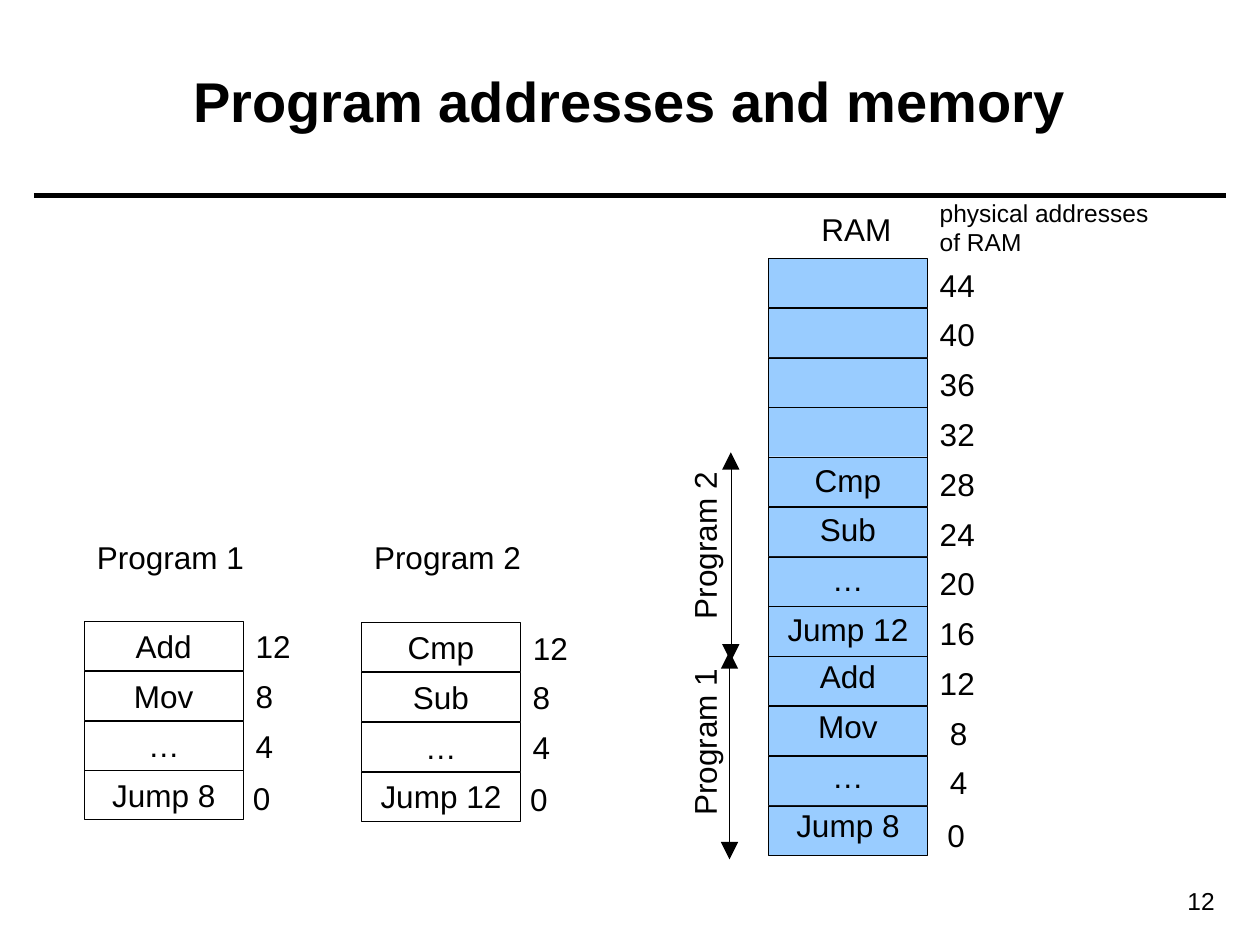
from dataclasses import dataclass

from lxml import etree
from pptx import Presentation
from pptx import util as u
from pptx.dml.color import RGBColor
from pptx.enum import shapes, text
from pptx.oxml import ns


@dataclass(frozen=True)
class Theme:
    font: str = "Arial"
    ink: RGBColor = RGBColor(0x00, 0x00, 0x00)
    memory: RGBColor = RGBColor(0x99, 0xCC, 0xFF)
    title: int = 32
    body: int = 18
    small: int = 14
    thin: float = 0.25
    rule: float = 3


THEME = Theme()
LEFT, CENTER, RIGHT = (text.PP_ALIGN.LEFT, text.PP_ALIGN.CENTER, text.PP_ALIGN.RIGHT)
MIDDLE, TOP = text.MSO_ANCHOR.MIDDLE, text.MSO_ANCHOR.TOP
FIT, FIXED = text.MSO_AUTO_SIZE.SHAPE_TO_FIT_TEXT, text.MSO_AUTO_SIZE.NONE

CELL_WIDTH, CELL_HEIGHT = 1.26, 0.39
PITCH = 0.395
LABEL_HEIGHT = 0.4
NAME_WIDTH = 1.42


def place(left, top, width, height):
    return [u.Inches(value) for value in (left, top, width, height)]


def write(shape, lines, size=THEME.body, align=LEFT, anchor=TOP,
          fit=FIXED, wrap=False, bold=False):
    """Fill a shape with one paragraph per line."""
    frame = shape.text_frame
    frame.text = "\n".join(lines)
    frame_format = {"word_wrap": wrap, "auto_size": fit, "vertical_anchor": anchor}
    for name, value in frame_format.items():
        setattr(frame, name, value)
    font_format = {"name": THEME.font, "size": u.Pt(size), "bold": bold}
    for para in frame.paragraphs:
        para.alignment = align
        for span in para.runs:
            for name, value in font_format.items():
                setattr(span.font, name, value)
            span.font.color.rgb = THEME.ink


def add_label(page, box, *lines, **format_values):
    label = page.shapes.add_textbox(*place(*box))
    write(label, lines, **{"fit": FIT, **format_values})
    return label


def add_cell(page, left, top, fill=None):
    cell = page.shapes.add_shape(
        shapes.MSO_SHAPE.RECTANGLE, *place(left, top, CELL_WIDTH, CELL_HEIGHT))
    cell.shadow.inherit = False
    cell.line.color.rgb = THEME.ink
    cell.line.width = u.Pt(THEME.thin)
    if fill is None:
        cell.fill.background()
    else:
        cell.fill.solid()
        cell.fill.fore_color.rgb = fill
    return cell


def add_line(page, start, end, width, arrows=False):
    line = page.shapes.add_connector(
        shapes.MSO_CONNECTOR.STRAIGHT, *place(*start, *end))
    line.line.color.rgb = THEME.ink
    line.line.width = u.Pt(width)
    if arrows:
        outline = line.line._get_or_add_ln()
        for tag in ("a:headEnd", "a:tailEnd"):
            etree.SubElement(outline, ns.qn(tag), type="triangle", w="lg", len="lg")
    etree.SubElement(line._element.spPr, ns.qn("a:effectLst"))


def add_address(page, left, top, address, indent=0.0):
    """Place an address beside its cell; zero sits slightly left and low."""
    width = 0.48 if address > 9 else 0.34
    if address <= 9:
        left += indent
    if address == 0:
        left, top = left - 0.02, top + 0.02
    add_label(page, (left, top, width, LABEL_HEIGHT), str(address))


def add_header(page, box):
    """Title, and the rule beneath it."""
    title = page.shapes.title
    title.left, title.top, title.width, title.height = place(*box)
    write(title, ["Program addresses and memory"], THEME.title, CENTER, MIDDLE,
          wrap=True, bold=True)
    add_line(page, (0.27, 1.55), (9.73, 1.55), THEME.rule)


def add_program(page, left, top, name, instructions):
    """A program's instructions with its own addresses, the highest on top."""
    add_label(page, (left, 4.22, NAME_WIDTH, LABEL_HEIGHT), name)
    for row, instruction in enumerate(instructions):
        row_top = top + row * PITCH
        cell = add_cell(page, left, row_top)
        write(cell, [instruction], align=CENTER, anchor=MIDDLE)
        address = 4 * (len(instructions) - 1 - row)
        add_address(page, left + CELL_WIDTH, row_top, address)


def add_memory(page, left, top, rows):
    """The column of RAM cells with physical addresses."""
    right = left + CELL_WIDTH
    add_label(page, (left + 0.32, 1.62, 0.82, LABEL_HEIGHT), "RAM")
    add_label(page, (right, 1.52, 1.9, 0.57), "physical addresses", "of RAM",
              size=THEME.small)
    for row in range(rows):
        row_top = top + row * PITCH
        add_cell(page, left, row_top, THEME.memory)
        add_address(page, right, row_top + 0.01, 4 * (rows - 1 - row), indent=0.08)


def add_loaded_program(page, left, top, name, instructions, arrow_left, arrow_span):
    """A program's instructions over the RAM cells, and the extent it takes."""
    for row, instruction in enumerate(instructions):
        add_label(page, (left, top + row * PITCH, CELL_WIDTH, CELL_HEIGHT),
                  instruction, align=CENTER, anchor=MIDDLE, fit=FIXED)
    start, end = arrow_span
    add_line(page, (arrow_left, start), (arrow_left, end), THEME.thin, arrows=True)
    # The name reads upwards, centred to the left of its arrow
    center, middle = 5.59, top + 2 * PITCH - 0.07
    box = (center - NAME_WIDTH / 2, middle - LABEL_HEIGHT / 2, NAME_WIDTH, LABEL_HEIGHT)
    add_label(page, box, name, align=CENTER).rotation = 270


def main():
    deck = Presentation()
    deck.slide_width, deck.slide_height = u.Inches(10), u.Inches(7.5)
    page = deck.slides.add_slide(deck.slide_layouts[5])

    first = ("Program 1", ("Add", "Mov", "…", "Jump 8"))
    second = ("Program 2", ("Cmp", "Sub", "…", "Jump 12"))

    add_header(page, (0.35, 0.17, 9.29, 1.25))
    add_label(page, (8.7, 6.98, 1.04, 0.34), "12", size=THEME.small,
              align=RIGHT, fit=FIXED, wrap=True)

    # Programs with their own addresses
    add_program(page, 0.67, 4.93, *first)
    add_program(page, 2.87, 4.94, *second)

    # Both programs loaded into memory
    add_memory(page, 6.1, 2.05, rows=12)
    add_loaded_program(page, 6.1, 5.17, *first, 5.79, (5.17, 6.82))
    add_loaded_program(page, 6.1, 3.61, *second, 5.8, (3.59, 5.25))

    deck.save("out.pptx")


if __name__ == "__main__":
    main()
